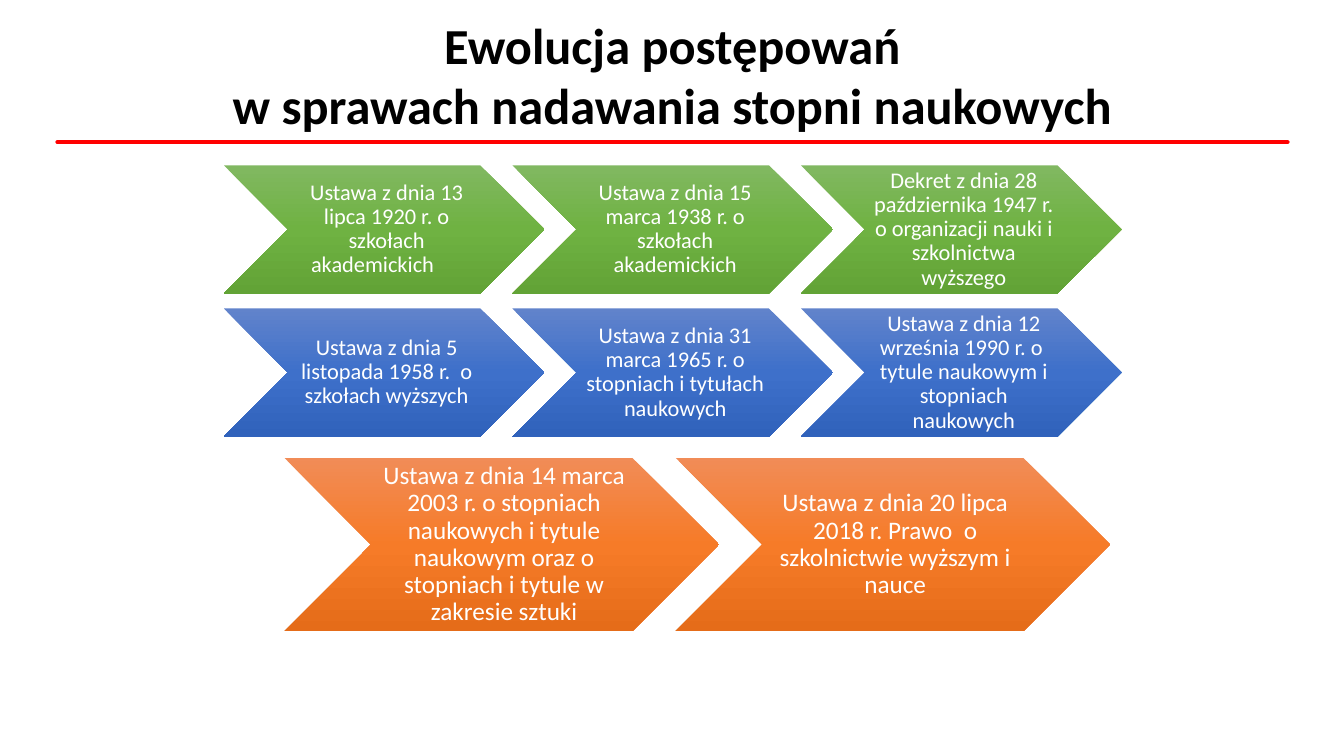
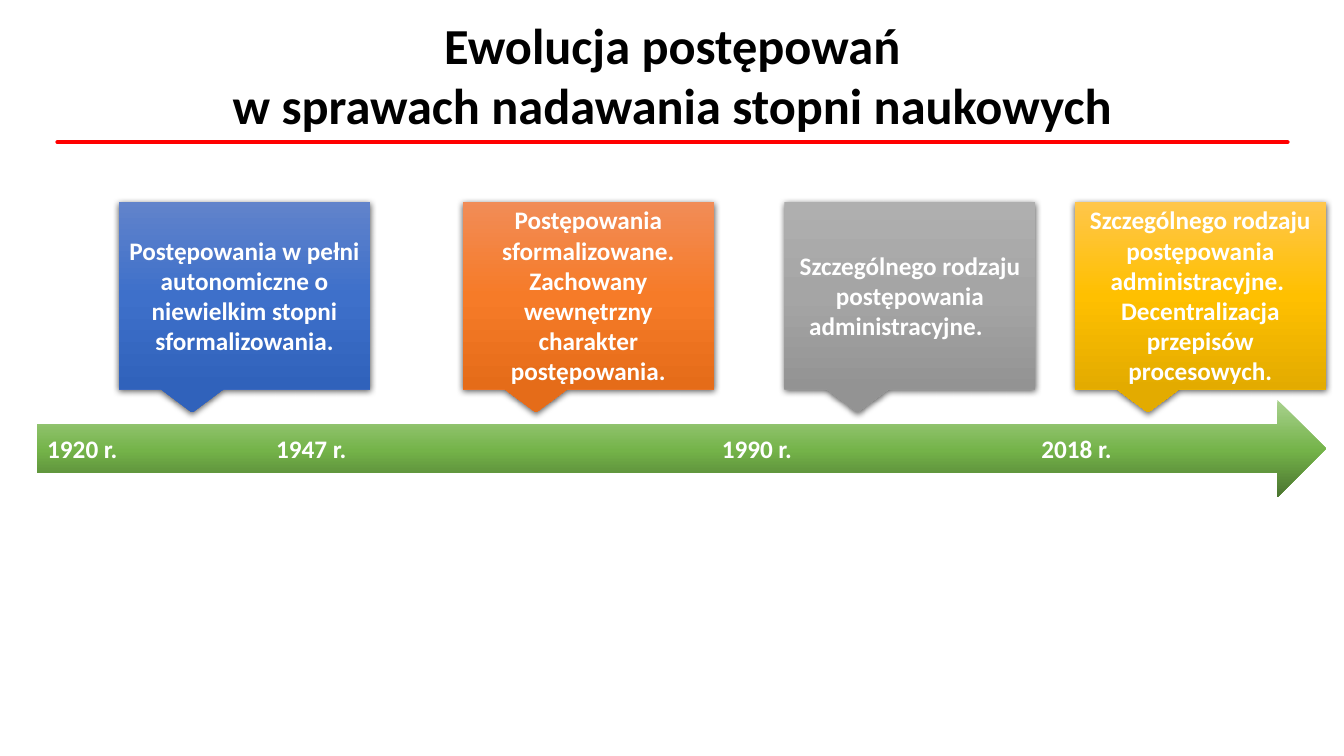
from copy import deepcopy

from lxml import etree
from pptx import Presentation
from pptx.dml.color import RGBColor
from pptx.enum.shapes import MSO_CONNECTOR, MSO_SHAPE
from pptx.enum.text import MSO_ANCHOR, MSO_AUTO_SIZE, PP_ALIGN
from pptx.oxml.ns import qn
from pptx.util import Inches, Pt

CHEVRON = MSO_SHAPE.CHEVRON
CALLOUT = MSO_SHAPE.RECTANGULAR_CALLOUT
ARROW = MSO_SHAPE.RIGHT_ARROW
STRAIGHT = MSO_CONNECTOR.STRAIGHT
MIDDLE = MSO_ANCHOR.MIDDLE
FIT_SHAPE = MSO_AUTO_SIZE.SHAPE_TO_FIT_TEXT
LEFT = PP_ALIGN.LEFT
CENTER = PP_ALIGN.CENTER

FONT = "Calibri"
COLORS = {"title": "000000", "rule": "FF0000", "text": "FFFFFF", "shadow": "000000"}
GRADIENTS = {
    "green": ((0, "81B861"), (0.5, "6FB242"), (1, "62A336")),
    "blue": ((0, "6183CB"), (0.5, "3E70CA"), (1, "3062BB")),
    "orange": ((0, "F18C57"), (0.5, "F67B28"), (1, "E56C19")),
    "gray": ((0, "AFAFAF"), (0.5, "A5A5A5"), (1, "939393")),
    "gold": ((0, "FFC64B"), (0.5, "FFC000"), (1, "E3AB00")),
    "timeline": ((0, "A9D18E"), (0.52, "74B349"), (1, "4B7430")),
}
TITLE = ("Ewolucja postępowań", "w sprawach nadawania stopni naukowych")
ACT_ROWS = (
    (2.22, 1.64, 3.18, 16, "green", (
        "Ustawa z dnia 13 lipca 1920 r. o szkołach akademickich\t",
        "Ustawa z dnia 15 marca 1938 r. o szkołach akademickich",
        "Dekret z dnia 28 października 1947 r. o organizacji nauki i szkolnictwa wyższego",
    )),
    (2.22, 3.06, 3.18, 16, "blue", (
        "Ustawa z dnia 5 listopada 1958 r.  o szkołach wyższych",
        "Ustawa z dnia 31 marca 1965 r. o stopniach i tytułach naukowych",
        "Ustawa z dnia 12 września 1990 r. o  tytule naukowym i stopniach naukowych",
    )),
    (2.82, 4.54, 4.31, 18, "orange", (
        "Ustawa z dnia 14 marca 2003 r. o stopniach naukowych i tytule naukowym "
        "oraz o stopniach i tytule w zakresie sztuki",
        "Ustawa z dnia 20 lipca 2018 r. Prawo  o szkolnictwie wyższym i nauce",
    )),
)
PERIODS = (
    (1.18, "blue", "Postępowania w pełni autonomiczne o niewielkim stopni sformalizowania."),
    (4.59, "orange", "Postępowania sformalizowane. Zachowany wewnętrzny charakter postępowania."),
    (7.78, "gray", "Szczególnego rodzaju postępowania administracyjne. \t"),
    (10.66, "gold", "Szczególnego rodzaju postępowania administracyjne.  "
                    "Decentralizacja przepisów procesowych."),
)
YEARS = ((0, "1920 r."), (2.27, "1947 r."), (6.69, "1990 r."), (9.86, "2018 r."))


def style_paragraph(para, size, color, bold, align):
    para.alignment = align
    para.font.name = FONT
    para.font.size = Pt(size)
    para.font.bold = bold
    para.font.color.rgb = RGBColor.from_string(COLORS[color])


def fill_gradient(shape, stops):
    shape.fill.gradient()
    shape.fill.gradient_angle = 270
    stop_list = shape._element.spPr.find(qn("a:gradFill")).find(qn("a:gsLst"))
    stop_list.insert(1, deepcopy(stop_list[0]))
    for stop, (position, color) in zip(shape.fill.gradient_stops, stops):
        stop.position = position
        stop.color.rgb = RGBColor.from_string(color)


def add_panel(page, kind, box, gradient, text, size, bold=True, align=CENTER):
    shape = page.shapes.add_shape(kind, *map(Inches, box))
    fill_gradient(shape, GRADIENTS[gradient])
    shape.line.fill.background()
    shape.shadow.inherit = False
    shape.text_frame.word_wrap = True
    shape.text_frame.vertical_anchor = MIDDLE
    para = shape.text_frame.paragraphs[0]
    para.add_run().text = text
    style_paragraph(para, size, "text", bold, align)
    return shape


def add_soft_shadow(shape):
    effects = shape._element.spPr.find(qn("a:effectLst"))
    shadow = etree.SubElement(effects, qn("a:outerShdw"), blurRad=str(Pt(4.5)),
                              dist=str(Pt(1.5)), dir="5400000", algn="ctr", rotWithShape="0")
    color = etree.SubElement(shadow, qn("a:srgbClr"), val=COLORS["shadow"])
    etree.SubElement(color, qn("a:alpha"), val="63000")


def add_title(page, left, top, width, height):
    box = page.shapes.add_textbox(*map(Inches, (left, top, width, height)))
    frame = box.text_frame
    frame.word_wrap = False
    frame.auto_size = FIT_SHAPE
    frame.text = "\n".join(TITLE)
    for para in frame.paragraphs:
        style_paragraph(para, 36, "title", True, CENTER)


def add_rule(page, left, top, right):
    rule = page.shapes.add_connector(STRAIGHT, *map(Inches, (left, top, right, top)))
    rule.line.color.rgb = RGBColor.from_string(COLORS["rule"])
    rule.line.width = Pt(3)
    properties = rule._element.spPr
    properties.find(qn("a:ln")).set("cap", "rnd")
    etree.SubElement(properties, qn("a:effectLst"))


def add_page(deck):
    page = deck.slides.add_slide(deck.slide_layouts[6])
    add_title(page, 2.1, 0.09, 9.14, 1.31)
    add_rule(page, 0.57, 1.41, 12.77)
    return page


def add_act_row(page, left, top, width, size, gradient, acts):
    for index, act in enumerate(acts):
        box = (left + index * width * 0.9, top, width, width * 0.4)
        frame = add_panel(page, CHEVRON, box, gradient, act, size, bold=False).text_frame
        frame.margin_left = Inches(0.07)
        frame.margin_right = frame.margin_top = frame.margin_bottom = Inches(0.02)
        frame.paragraphs[0].line_spacing = 0.9


def add_timeline(page, left, top, width, height):
    text = "\t".join(year for _, year in YEARS)
    arrow = add_panel(page, ARROW, (left, top, width, height), "timeline", text, 18, align=LEFT)
    properties = arrow.text_frame.paragraphs[0]._p.get_or_add_pPr()
    tabs = etree.Element(qn("a:tabLst"))
    for offset, _ in YEARS[1:]:
        etree.SubElement(tabs, qn("a:tab"), pos=str(Inches(offset)), algn="l")
    properties.insert(0, tabs)


def add_periods(page, top, width, height):
    for left, gradient, text in PERIODS:
        add_soft_shadow(add_panel(page, CALLOUT, (left, top, width, height), gradient, text, 18))


def build_acts(deck):
    page = add_page(deck)
    for row in ACT_ROWS:
        add_act_row(page, *row)


def build_history(deck):
    page = add_page(deck)
    add_timeline(page, 0.37, 3.97, 12.78, 0.96)
    add_periods(page, 2, 2.49, 1.86)


def main():
    deck = Presentation()
    deck.slide_width = Inches(13.33)
    deck.slide_height = Inches(7.5)
    build_acts(deck)
    build_history(deck)
    deck.save("out.pptx")


if __name__ == "__main__":
    main()
